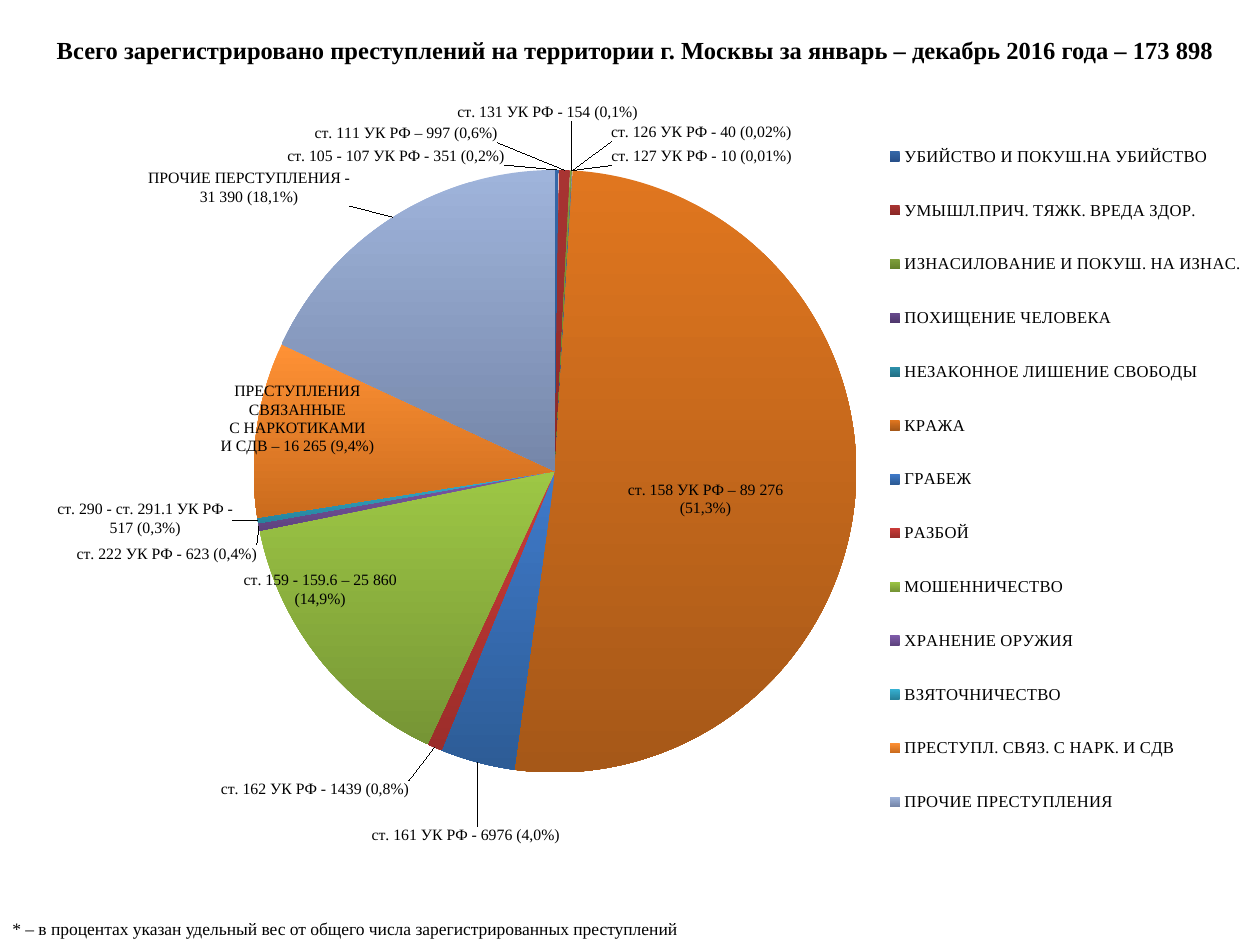
from lxml import etree
from pptx import Presentation
from pptx.chart.data import CategoryChartData
from pptx.dml.color import RGBColor
from pptx.enum import chart as charts, text
from pptx.oxml.ns import qn
from pptx.util import Inches, Pt

FONT = "Times New Roman"
COLORS = {
    "text": "000000",
    "blue": ("3F7ACA", "2D5C96"), "dark blue": ("3568A8", "27508A"),
    "red": ("CC3B38", "9B2D2A"), "dark red": ("A83432", "8A2826"),
    "green": ("9DC745", "769535"), "dark green": ("7F9F3A", "64822A"),
    "purple": ("7F5BAA", "5E437F"), "dark purple": ("694B8E", "4F376D"),
    "teal": ("36B1D2", "27839C"), "dark teal": ("2D93AE", "226F84"),
    "orange": ("FF9135", "CB6C1D"), "dark orange": ("E0761F", "A65818"),
    "pale blue": ("9FB4DB", "7586A9"),
}
CHART_W, CHART_H = 9.76, 6.47

# category, share in percent, colour, label lines, label shift in inches (right, down)
CRIMES = [
    ("УБИЙСТВО И ПОКУШ.НА УБИЙСТВО", 0.2, "dark blue",
     ["ст. 105 - 107 УК РФ - 351 (0,2%)"], (-1.28, 0.02)),
    ("УМЫШЛ.ПРИЧ. ТЯЖК. ВРЕДА ЗДОР.", 0.6, "dark red",
     ["ст. 111 УК РФ – 997 (0,6%)"], (-1.26, -0.16)),
    ("ИЗНАСИЛОВАНИЕ И ПОКУШ. НА ИЗНАС.", 0.1, "dark green",
     ["ст. 131 УК РФ - 154 (0,1%)"], (-0.19, -0.33)),
    ("ПОХИЩЕНИЕ ЧЕЛОВЕКА", 0.02, "dark purple",
     ["ст. 126 УК РФ - 40 (0,02%)"], (1.02, -0.17)),
    ("НЕЗАКОННОЕ ЛИШЕНИЕ СВОБОДЫ", 0.01, "dark teal",
     ["ст. 127 УК РФ - 10 (0,01%)"], (1.02, 0.02)),
    ("КРАЖА", 51.3, "dark orange",
     ["ст. 158 УК РФ – 89 276", "(51,3%)"], (-1.86, -0.16)),
    ("ГРАБЕЖ", 4, "blue",
     ["ст. 161 УК РФ - 6976 (4,0%)"], (0.67, 0.45)),
    ("РАЗБОЙ", 0.8, "red",
     ["ст. 162 УК РФ - 1439 (0,8%)"], (-0.18, 0.21)),
    ("МОШЕННИЧЕСТВО", 14.9, "green",
     ["ст. 159 - 159.6 – 25 860", "(14,9%)"], (0.67, -0.72)),
    ("ХРАНЕНИЕ ОРУЖИЯ", 0.4, "purple",
     ["ст. 222 УК РФ - 623 (0,4%)"], (0.04, 0.13)),
    ("ВЗЯТОЧНИЧЕСТВО", 0.3, "teal",
     ["ст. 290 - ст. 291.1 УК РФ -", "517 (0,3%)"], (-0.14, -0.17)),
    ("ПРЕСТУПЛ. СВЯЗ. С НАРК. И СДВ", 9.4, "orange",
     ["ПРЕСТУПЛЕНИЯ", "СВЯЗАННЫЕ", "С НАРКОТИКАМИ", "И СДВ – 16 265 (9,4%)"],
     (0.99, 0.22)),
    ("ПРОЧИЕ ПРЕСТУПЛЕНИЯ", 18.1, "pale blue",
     ["ПРОЧИЕ ПЕРСТУПЛЕНИЯ -", "31 390 (18,1%)"], (-0.31, -0.04)),
]


def add_run(paragraph, words, size, bold=False):
    run = paragraph.add_run()
    run.text = words
    run.font.name = FONT
    run.font.size = Pt(size)
    run.font.bold = bold
    run.font.color.rgb = RGBColor.from_string(COLORS["text"])


def manual_layout(**settings):
    """Return a c:layout element with the given settings in schema order."""
    layout = etree.Element(qn("c:layout"))
    manual = etree.SubElement(layout, qn("c:manualLayout"))
    for tag, value in settings.items():
        etree.SubElement(manual, qn(f"c:{tag}")).set("val", str(value))
    return layout


prs = Presentation()
prs.slide_width, prs.slide_height = Inches(10), Inches(7.5)
slide = prs.slides.add_slide(prs.slide_layouts[5])

title = slide.shapes.title
title.left, title.top = Inches(0.28), Inches(0.23)
title.width, title.height = Inches(9.53), Inches(0.68)
title.text_frame.vertical_anchor = text.MSO_ANCHOR.TOP
heading = title.text_frame.paragraphs[0]
heading.alignment = text.PP_ALIGN.CENTER
add_run(heading, "Всего зарегистрировано преступлений на территории г. Москвы "
        "за январь – декабрь 2016 года – 173 898", 14, True)

footnote = slide.shapes.add_textbox(Inches(0), Inches(7.24), Inches(9.3), Inches(0.26))
footnote.text_frame.word_wrap = True
add_run(footnote.text_frame.paragraphs[0], "* – в процентах указан удельный вес "
        "от общего числа зарегистрированных преступлений", 10)

shares = CategoryChartData(number_format="0.0%")
shares.categories = [crime[0] for crime in CRIMES]
shares.add_series("Series 1", [round(crime[1] / 100, 4) for crime in CRIMES])
pie = slide.shapes.add_chart(
    charts.XL_CHART_TYPE.PIE, Inches(0.16), Inches(0.57),
    Inches(CHART_W), Inches(CHART_H), shares).chart
pie.has_title = False
pie.font.name = FONT
pie.font.size = Pt(10)
pie.font.color.rgb = RGBColor.from_string(COLORS["text"])

pie.has_legend = True
pie.legend.position = charts.XL_LEGEND_POSITION.RIGHT
pie.legend.include_in_layout = False
pie.legend.font.size = Pt(9.5)
pie.legend.font.name = FONT
legend_xml = pie.legend._element
for old in legend_xml.findall(qn("c:layout")):
    legend_xml.remove(old)
legend_xml.find(qn("c:legendPos")).addnext(manual_layout(
    xMode="edge", yMode="edge", x=0.7, y=0.05, w=0.3, h=0.9))

plot = pie.plots[0]
plot.vary_by_categories = True
plot_area = pie._chartSpace.chart.plotArea
for old in plot_area.findall(qn("c:layout")):
    plot_area.remove(old)
plot_area.insert(0, manual_layout(
    layoutTarget="inner", xMode="edge", yMode="edge", x=0.19, y=0.1, w=0.49, h=0.78))

series = plot.series[0]
labels = series.data_labels
labels.show_value = True
labels.number_format = "0.0%"
labels.number_format_is_linked = False
labels.font.size = Pt(9)
labels.font.name = FONT
for i, (_, _, color, lines, (right, down)) in enumerate(CRIMES):
    point = series.points[i]
    fill = point.format.fill
    fill.gradient()
    fill.gradient_angle = 270
    for stop, shade in zip(fill.gradient_stops, COLORS[color]):
        stop.color.rgb = RGBColor.from_string(shade)
    point.format.line.fill.background()

    label = point.data_label
    frame = label.text_frame
    for n, line in enumerate(lines):
        paragraph = frame.add_paragraph() if n else frame.paragraphs[0]
        add_run(paragraph, line, 9)
    label.position = charts.XL_LABEL_POSITION.BEST_FIT
    label_xml = labels._element.findall(qn("c:dLbl"))[i]
    label_xml.find(qn("c:idx")).addnext(
        manual_layout(x=round(right / CHART_W, 4), y=round(down / CHART_H, 4)))

leader = labels._element.find(qn("c:showLeaderLines"))
if leader is None:
    leader = etree.SubElement(labels._element, qn("c:showLeaderLines"))
leader.set("val", "1")

prs.save("out.pptx")
